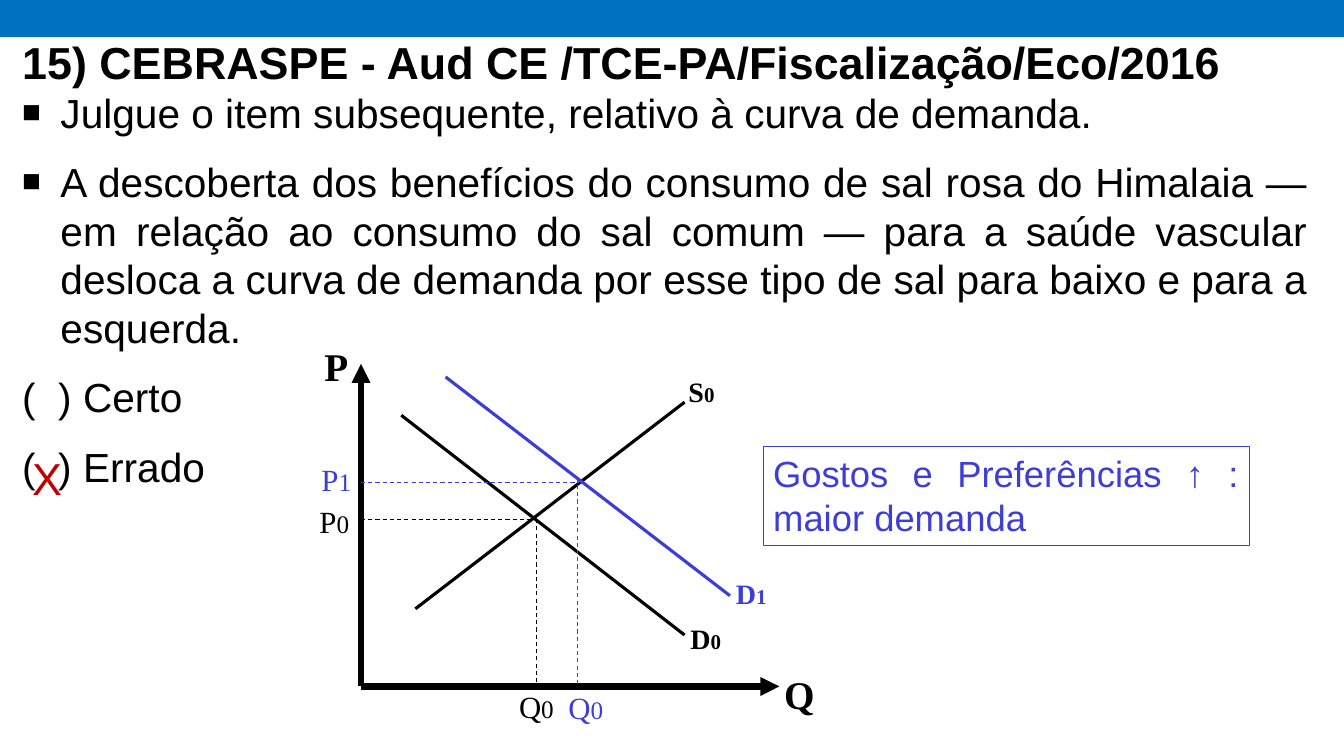
"""Build the exam-question slide about the shift of a demand curve."""
from lxml import etree
from pptx import Presentation
from pptx import util as u
from pptx.dml.color import RGBColor
from pptx.enum import dml, shapes, text
from pptx.oxml.ns import qn

THEME = {
    "band": RGBColor(0x00, 0x70, 0xC0),
    "ink": RGBColor(0, 0, 0),
    "shift": RGBColor(0x3D, 0x3D, 0xD7),
    "mark": RGBColor(0xC0, 0, 0),
    "title": {"name": "Arial", "size": u.Pt(32), "bold": True},
    "body": {"name": "Arial", "size": u.Pt(29), "bold": False},
    "answer": {"name": "Arial", "size": u.Pt(32), "bold": False},
    "note": {"name": "Arial", "size": u.Pt(26), "bold": False},
    "axis": {"name": "Times New Roman", "size": u.Pt(28), "bold": True},
    "curve": {"name": "Times New Roman", "size": u.Pt(20), "bold": True},
    "level": {"name": "Times New Roman", "size": u.Pt(22), "bold": False},
    "curve_index": {"name": "Times New Roman", "size": u.Pt(15), "bold": True},
    "level_index": {"name": "Times New Roman", "size": u.Pt(18), "bold": False},
}


def write(paragraph, words, role, color="ink"):
    paragraph.alignment = text.PP_ALIGN.JUSTIFY
    run = paragraph.add_run()
    run.text = words
    for key, value in THEME[role].items():
        setattr(run.font, key, value)
    run.font.color.rgb = THEME[color]


def set_frame(frame, **layout):
    for key, value in {"word_wrap": True, **layout}.items():
        setattr(frame, key, value)
    return frame.paragraphs[0]


deck = Presentation()
deck.slide_width, deck.slide_height = u.Inches(13.33), u.Inches(7.5)
slide = deck.slides.add_slide(deck.slide_layouts[1])

band = slide.shapes.add_shape(
    shapes.MSO_SHAPE.RECTANGLE, 0, u.Inches(-0.03), deck.slide_width, u.Inches(0.4))
band.shadow.inherit = False
band.fill.solid()
band.fill.fore_color.rgb = THEME["band"]
band.line.fill.background()

heading, question = slide.placeholders
for part, top, height in ((heading, -0.52, 1.45), (question, 0.82, 4.74)):
    part.left, part.top = u.Inches(0.12), u.Inches(top)
    part.width, part.height = u.Inches(12.96), u.Inches(height)

write(set_frame(heading.text_frame, vertical_anchor=text.MSO_ANCHOR.BOTTOM,
                auto_size=text.MSO_AUTO_SIZE.NONE),
      "15) CEBRASPE - Aud CE /TCE-PA/Fiscalização/Eco/2016", "title")

statements = [
    ("Julgue o item subsequente, relativo à curva de demanda.", True),
    ("A descoberta dos benefícios do consumo de sal rosa do Himalaia — em relação "
     "ao consumo do sal comum — para a saúde vascular desloca a curva de demanda "
     "por esse tipo de sal para baixo e para a esquerda.", True),
    ("(  ) Certo", False),
    ("(  ) Errado", False),
]
paragraph = set_frame(question.text_frame, auto_size=text.MSO_AUTO_SIZE.NONE)
for order, (words, bulleted) in enumerate(statements):
    if order:
        paragraph = question.text_frame.add_paragraph()
    props = paragraph._p.get_or_add_pPr()
    indent = u.Inches(0.38) if bulleted else 0
    props.set("marL", str(indent))
    props.set("indent", str(-indent))
    if bulleted:
        bullet_color = etree.SubElement(props, qn("a:buClr"))
        etree.SubElement(bullet_color, qn("a:srgbClr"), val=str(THEME["ink"]))
        etree.SubElement(props, qn("a:buSzPct"), val="77000")
        etree.SubElement(props, qn("a:buFont"), typeface="Arial")
        etree.SubElement(props, qn("a:buChar"), char="■")
    else:
        etree.SubElement(props, qn("a:buNone"))
    paragraph.line_spacing = u.Pt(34.75)
    paragraph.space_before = u.Pt(14.75 if order else 0)
    write(paragraph, words, "body")

answer = slide.shapes.add_textbox(
    u.Inches(0.22), u.Inches(4.23), u.Inches(0.46), u.Inches(0.98))
write(set_frame(answer.text_frame, vertical_anchor=text.MSO_ANCHOR.MIDDLE,
                margin_top=u.Inches(0.24), margin_bottom=u.Inches(0.2)),
      "X", "answer", "mark")

origin = (3.58, 6.81)
old_price, old_quantity = 5.15, 5.32
new_price, new_quantity = 4.79, 5.73
strokes = [
    (origin, (origin[0], 3.61), "ink", "axis"),
    (origin, (7.73, origin[1]), "ink", "axis"),
    ((3.98, 4.12), (6.79, 6.3), "ink", "curve"),
    ((4.12, 6.04), (6.79, 3.99), "ink", "curve"),
    ((origin[0], old_price), (old_quantity, old_price), "ink", "guide"),
    ((old_quantity, old_price), (old_quantity, origin[1]), "ink", "guide"),
    ((4.42, 3.74), (7.24, 5.91), "shift", "curve"),
    ((new_quantity, 4.74), (new_quantity, 6.79), "shift", "guide"),
    ((origin[0], new_price), (new_quantity, new_price), "shift", "guide"),
]
weights = {"axis": 4.5, "curve": 2.25, "guide": 0.75}
for start, end, color, role in strokes:
    stroke = slide.shapes.add_connector(
        shapes.MSO_CONNECTOR.STRAIGHT, *map(u.Inches, start + end))
    stroke.line.color.rgb = THEME[color]
    stroke.line.width = u.Pt(weights[role])
    if role == "guide":
        stroke.line.dash_style = dml.MSO_LINE.DASH
    if role == "axis":
        etree.SubElement(stroke.line._get_or_add_ln(), qn("a:tailEnd"), type="triangle")
    etree.SubElement(stroke._element.spPr, qn("a:effectLst"))

labels = [
    ("S", "0", (6.73, 3.67, 0.94, 0.44), "curve", "ink"),
    ("D", "0", (6.75, 6.12, 0.94, 0.77), "curve", "ink"),
    ("D", "1", (7.2, 5.67, 0.94, 0.77), "curve", "shift"),
    ("P", "", (3.12, 3.35, 0.27, 0.57), "axis", "ink"),
    ("Q", "", (7.68, 6.6, 0.27, 0.57), "axis", "ink"),
    ("P", "0", (3.07, 4.94, 0.8, 0.47), "level", "ink"),
    ("P", "1", (3.09, 4.52, 0.8, 0.47), "level", "shift"),
    ("Q", "0", (5.05, 6.77, 0.8, 0.47), "level", "ink"),
    ("Q", "0", (5.54, 6.78, 0.8, 0.47), "level", "shift"),
]
for symbol, index, place, role, color in labels:
    label = slide.shapes.add_textbox(*map(u.Inches, place))
    paragraph = set_frame(label.text_frame)
    write(paragraph, symbol, role, color)
    if index:
        write(paragraph, index, f"{role}_index", color)

note = slide.shapes.add_shape(
    shapes.MSO_SHAPE.RECTANGLE, *map(u.Inches, (7.57, 4.43, 4.82, 0.98)))
note.shadow.inherit = False
note.fill.background()
note.line.color.rgb = THEME["shift"]
note.line.width = u.Pt(0.75)
write(set_frame(note.text_frame, vertical_anchor=text.MSO_ANCHOR.TOP),
      "Gostos e Preferências ↑ : maior demanda", "note", "shift")

deck.save("out.pptx")
